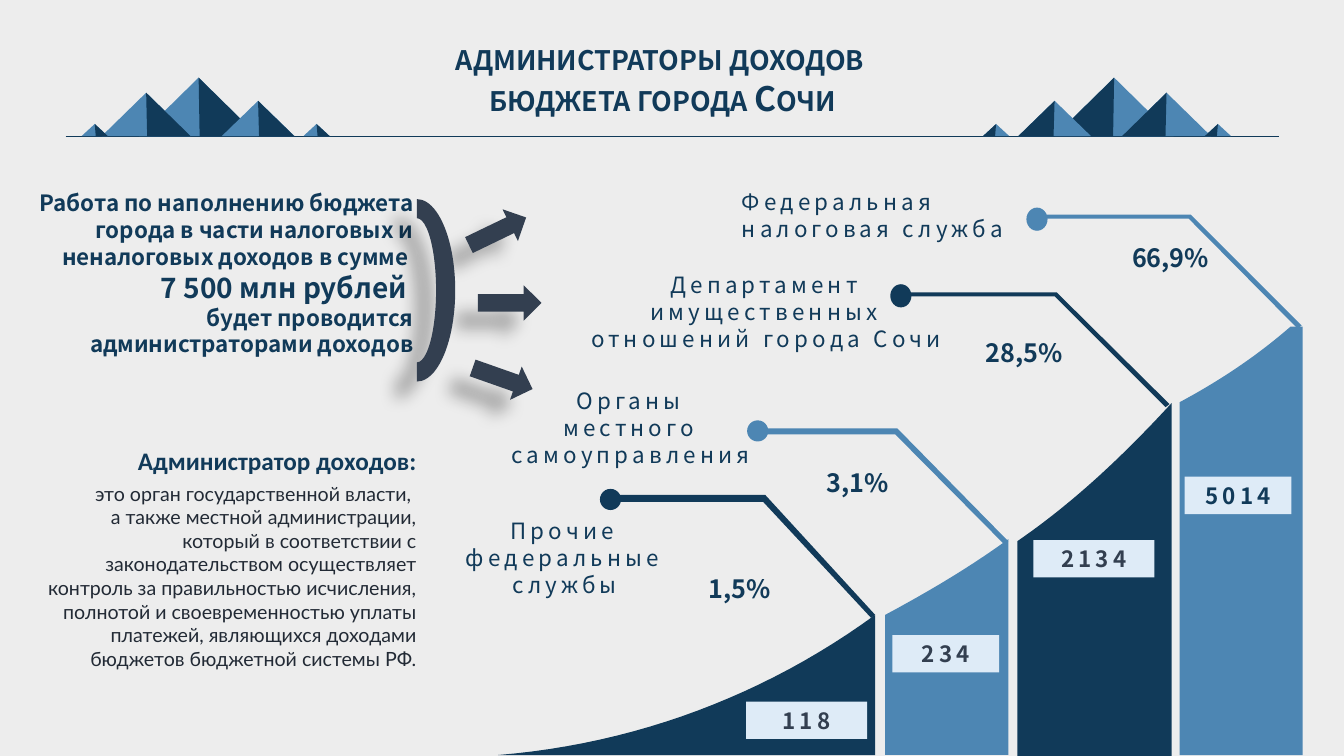
from lxml import etree
from pptx import Presentation
from pptx.dml.color import RGBColor
from pptx.enum.shapes import MSO_CONNECTOR, MSO_SHAPE
from pptx.enum.text import MSO_ANCHOR, PP_ALIGN
from pptx.oxml.ns import qn
from pptx.util import Pt

PX = 9144  # 100 px to the inch
NAVY = RGBColor(0x11, 0x3A, 0x59)
BLUE = RGBColor(0x4D, 0x86, 0xB3)
SLATE = RGBColor(0x33, 0x3F, 0x50)
INK = RGBColor(0x22, 0x2A, 0x35)
PALE = RGBColor(0xDE, 0xEB, 0xF7)
GREY = RGBColor(0xED, 0xED, 0xED)
LEFT, MID, RIGHT = PP_ALIGN.LEFT, PP_ALIGN.CENTER, PP_ALIGN.RIGHT
TOP, CENTRE = MSO_ANCHOR.TOP, MSO_ANCHOR.MIDDLE
PEAK, DOT, RECT = MSO_SHAPE.ISOSCELES_TRIANGLE, MSO_SHAPE.OVAL, MSO_SHAPE.RECTANGLE
ARROW, ARC = MSO_SHAPE.RIGHT_ARROW, MSO_SHAPE.BLOCK_ARC
NOTO = "Noto Sans CJK SC"

deck = Presentation()
deck.slide_width, deck.slide_height = 1333 * PX, 750 * PX
slide = deck.slides.add_slide(deck.slide_layouts[5])
slide.background.fill.solid()
slide.background.fill.fore_color.rgb = GREY
shapes = slide.shapes


def draw(form, color, box=None):
    """Draw a preset shape in a box, or a polygon from a list of points."""
    if box:
        shape = shapes.add_shape(form, *[v * PX for v in box])
    else:
        dots = [(x * PX, y * PX) for x, y in form]
        pen = shapes.build_freeform(*dots[0], scale=1.0)
        pen.add_line_segments(dots[1:], close=True)
        shape = pen.convert_to_shape()
    shape.shadow.inherit = False
    shape.fill.solid()
    shape.fill.fore_color.rgb = color
    shape.line.fill.background()
    return shape


def write(text, host, size=16, font=NOTO, color=NAVY, bold=False,
          align=LEFT, anchor=TOP, gap=0, caps=False, wrap=True):
    """Write lines into a shape, or into a new text box at a given place."""
    if isinstance(host, tuple):
        host = shapes.add_textbox(*[v * PX for v in host])
    frame = host.text_frame
    frame.word_wrap, frame.vertical_anchor = wrap, anchor
    frame.text = text
    for para in frame.paragraphs:
        para.alignment = align
        style = para.runs[0].font
        style.size, style.name, style.bold = Pt(size), font, bold
        style.color.rgb = color
        props = para.runs[0]._r.get_or_add_rPr()
        if gap:
            props.set("spc", str(gap * 100))
        if caps:
            props.set("cap", "small")
    return frame


# Title and rule
title = shapes.title
title.left, title.top, title.width, title.height = [v * PX for v in (419, 33, 477, 88)]
frame = write("администраторы доходов \nбюджета города Сочи", title, size=24,
              bold=True, align=MID, caps=True, wrap=False)
frame.margin_left = frame.margin_right = 8 * PX
frame.margin_top = frame.margin_bottom = 4 * PX
rule = shapes.add_connector(MSO_CONNECTOR.STRAIGHT, 65 * PX, 135 * PX, 1269 * PX, 135 * PX)
rule.line.color.rgb, rule.line.width = NAVY, Pt(0.5)
etree.SubElement(rule._element.spPr, qn("a:effectLst"))

# Mountains: peak, half width and height, mirrored on the left
BASE = 135
for mid, half, high in [(1105, 59, 58), (1046, 36, 35), (1157, 44, 43),
                        (988, 13, 12), (1208, 13, 12)]:
    for x in (mid, 1302 - mid):
        side = 1 if x == mid else -1
        draw(PEAK, BLUE, (x - half, BASE - high, 2 * half, high))
        draw([(x, BASE - high), (x - side, BASE), (x - side * half, BASE)], NAVY)

# Rising columns: curved top from left to right, then the foot
for color, foot, (a, b, c, d) in [
        (NAVY, 749, [(494, 749), (631, 738), (760, 689), (868, 610)]),
        (BLUE, 749, [(878, 610), (921, 587), (963, 562), (1000, 535)]),
        (NAVY, 750, [(1009, 537), (1067, 497), (1116, 450), (1162, 400)]),
        (BLUE, 749, [(1170, 399), (1213, 376), (1249, 351), (1280, 324)])]:
    crest = []
    for step in range(25):
        t = step / 24
        w = ((1 - t) ** 3, 3 * t * (1 - t) ** 2, 3 * t * t * (1 - t), t ** 3)
        crest.append([sum(k * p[i] for k, p in zip(w, (a, b, c, d))) for i in (0, 1)])
    if d[0] == 1280:
        crest.append((1292, 324))
    draw(crest + [(crest[-1][0], foot), (a[0], foot)], color)

# Leaders with dots, shares and amounts
for color, (x, y, thick), (ex, ey), dot, share, spot, sum_, tag, ink in [
        (NAVY, (614, 491, 7), (868, 610), (595, 485, 21, 21),
         "1,5%", (693, 564), "118", (740, 696, 120, 37), SLATE),
        (BLUE, (745, 425, 6), (1000, 537), (741, 417, 21, 21),
         "3,1%", (810, 459), "234", (885, 630, 106, 37), SLATE),
        (NAVY, (903, 290, 4), (1160, 401), (883, 282, 21, 23),
         "28,5%", (968, 330), "2134", (1025, 536, 120, 37), SLATE),
        (BLUE, (1036, 213, 4), (1291, 323), (1018, 206, 21, 23),
         "66,9%", (1113, 235), "5014", (1175, 473, 106, 37), NAVY)]:
    bend = x + 145
    draw([(x, y), (bend, y), (ex, ey), (ex - 4, ey + 3),
          (bend - 2, y + thick), (x, y + thick)], color)
    draw(DOT, color, dot)
    write(share, (*spot, 118, 40), size=18, bold=True)
    write(sum_, draw(RECT, PALE, tag), color=ink, bold=True,
          align=MID, anchor=CENTRE, gap=3)

# Names of the administrators
for name, box, align in [
        ("Федеральная\nналоговая служба", (726, 182, 386, 64), LEFT),
        ("Департамент имущественных отношений города Сочи", (564, 264, 392, 91), MID),
        ("Органы местного самоуправления", (492, 379, 267, 91), MID),
        ("Прочие федеральные службы", (420, 508, 280, 91), MID)]:
    write(name, box, align=align, gap=3)

# Texts on the left
work = write("Работа по наполнению бюджета города в части налоговых и неналоговых "
             "доходов в сумме \n7 500 млн рублей \n"
             "будет проводится администраторами доходов",
             (25, 183, 395, 205), bold=True, align=RIGHT)
work.paragraphs[1].runs[0].font.size = Pt(20)
write("Администратор доходов:", (127, 437, 313, 45), size=18, font="Calibri", bold=True)
write("это орган государственной власти, \n"
      "а также местной администрации, который в соответствии с законодательством "
      "осуществляет контроль за правильностью исчисления, полнотой и "
      "своевременностью уплаты платежей, являющихся доходами бюджетов "
      "бюджетной системы РФ.",
      (25, 473, 398, 222), size=14, font="Lato", color=INK, align=RIGHT)

# Arc and arrows with soft shadows
for form, box, turn in [(ARROW, (462, 212, 63, 35), 334.2),
                        (ARROW, (474, 283, 63, 35), 0),
                        (ARROW, (467, 358, 63, 35), 19.4),
                        (ARC, (323, 250, 181, 76), 90)]:
    shape = draw(form, SLATE, box)
    shape.rotation = turn
    effect = shape._element.spPr.find(qn("a:effectLst"))
    shade = etree.SubElement(effect, qn("a:outerShdw"), blurRad=str(Pt(11.8)),
                             dist=str(Pt(19.7)), dir=str(141 * 60000), rotWithShape="0")
    black = etree.SubElement(shade, qn("a:srgbClr"), val="000000")
    etree.SubElement(black, qn("a:alpha"), val="28000")

deck.save("out.pptx")
